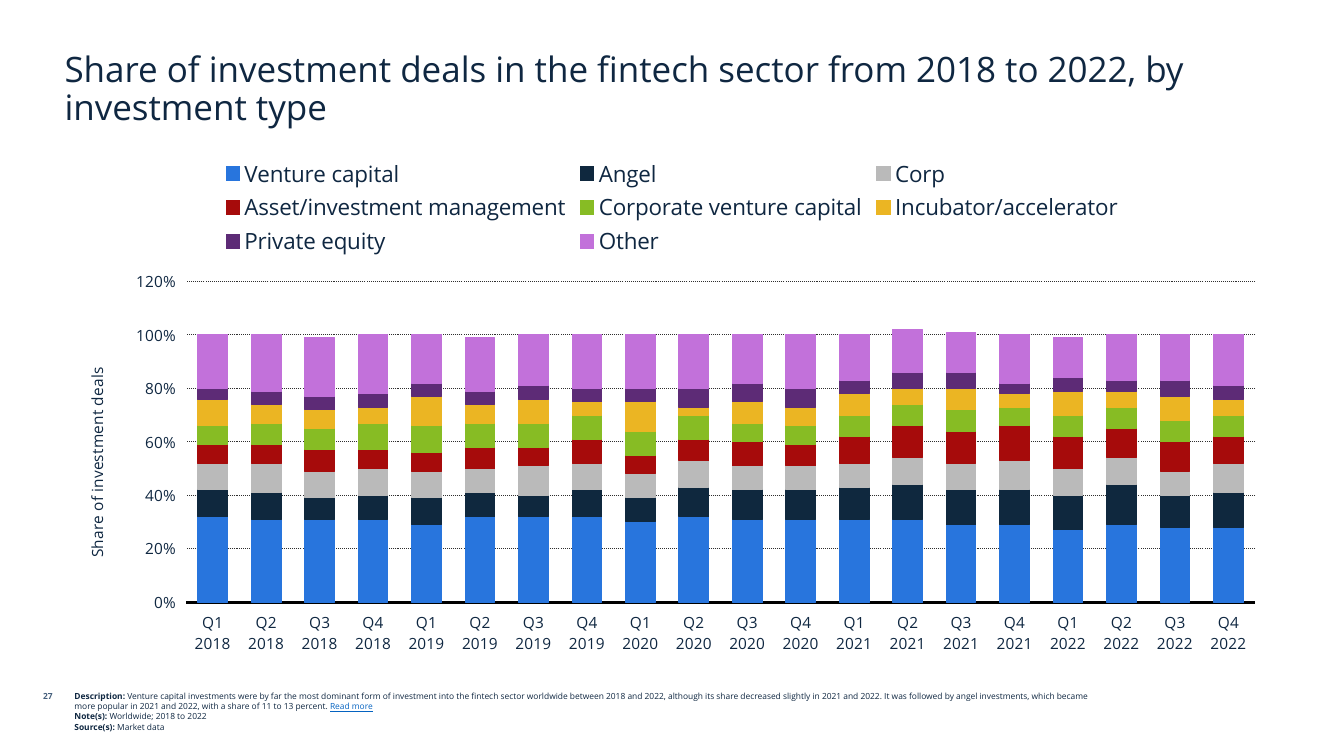
from dataclasses import dataclass

from lxml import etree
from pptx import Presentation
from pptx.chart.chart import Chart
from pptx.chart.data import CategoryChartData
from pptx.dml.color import RGBColor
from pptx.enum.chart import XL_CHART_TYPE, XL_LEGEND_POSITION, XL_TICK_LABEL_POSITION, XL_TICK_MARK
from pptx.enum.dml import MSO_LINE
from pptx.enum.text import MSO_ANCHOR, MSO_AUTO_SIZE, PP_ALIGN
from pptx.oxml.ns import qn
from pptx.util import Emu, Pt

STACKED = XL_CHART_TYPE.COLUMN_STACKED
LEGEND_TOP = XL_LEGEND_POSITION.TOP
LABELS_LOW = XL_TICK_LABEL_POSITION.LOW
NO_TICK = XL_TICK_MARK.NONE
DOTTED = MSO_LINE.ROUND_DOT
LEFT, RIGHT = PP_ALIGN.LEFT, PP_ALIGN.RIGHT
BOTTOM = MSO_ANCHOR.BOTTOM
NO_FIT = MSO_AUTO_SIZE.NONE
EMU_PER_PX = 9144


@dataclass(frozen=True)
class Theme:
    font: str = "Open Sans"
    ink: str = "0F2741"
    link: str = "0563C1"
    page_number: str = "455F7C"
    axis: str = "000000"
    grid: str = "2F2F2F"
    title_size: int = 25
    legend_size: int = 16
    axis_size: int = 11
    note_size: int = 6


@dataclass(frozen=True)
class Area:
    left: int
    top: int
    width: int
    height: int

    def emu(self) -> tuple:
        return tuple(Emu(side * EMU_PER_PX) for side in (self.left, self.top, self.width, self.height))


@dataclass(frozen=True)
class Span:
    text: str
    color: str
    bold: bool = False
    underline: bool = False


@dataclass(frozen=True)
class DealType:
    name: str
    color: str
    percents: tuple


THEME = Theme()
TITLE_AREA = Area(54, 46, 1224, 86)
CHART_AREA = Area(64, 146, 1205, 513)
NOTES_AREA = Area(64, 681, 1047, 58)
NUMBER_AREA = Area(0, 681, 62, 30)
PLOT_LAYOUT = {"x": 0.1, "y": 0.26, "w": 0.88, "h": 0.62}

TITLE = "Share of investment deals in the fintech sector from 2018 to 2022, by investment type"
DESCRIPTION = (
    "Venture capital investments were by far the most dominant form of investment into the fintech "
    "sector worldwide between 2018 and 2022, although its share decreased slightly in 2021 and 2022. "
    "It was followed by angel investments, which became more popular in 2021 and 2022, with a share "
    "of 11 to 13 percent. "
)
NOTES = (
    (
        Span("Description: ", THEME.ink, bold=True),
        Span(DESCRIPTION, THEME.ink),
        Span("Read more", THEME.link, underline=True),
    ),
    (Span("Note(s): ", THEME.ink, bold=True), Span("Worldwide; 2018 to 2022", THEME.ink)),
    (Span("Source(s): ", THEME.ink, bold=True), Span("Market data", THEME.ink)),
)
QUARTERS = [f"Q{quarter} {year}" for year in range(2018, 2023) for quarter in range(1, 5)]
DEAL_TYPES = (
    DealType("Venture capital", "2875DD",
             (32, 31, 31, 31, 29, 32, 32, 32, 30, 32, 31, 31, 31, 31, 29, 29, 27, 29, 28, 28)),
    DealType("Angel", "0F283E",
             (10, 10, 8, 9, 10, 9, 8, 10, 9, 11, 11, 11, 12, 13, 13, 13, 13, 15, 12, 13)),
    DealType("Corp", "BABABA",
             (10, 11, 10, 10, 10, 9, 11, 10, 9, 10, 9, 9, 9, 10, 10, 11, 10, 10, 9, 11)),
    DealType("Asset/investment management", "A60B0B",
             (7, 7, 8, 7, 7, 8, 7, 9, 7, 8, 9, 8, 10, 12, 12, 13, 12, 11, 11, 10)),
    DealType("Corporate venture capital", "87BC24",
             (7, 8, 8, 10, 10, 9, 9, 9, 9, 9, 7, 7, 8, 8, 8, 7, 8, 8, 8, 8)),
    DealType("Incubator/accelerator", "EBB523",
             (10, 7, 7, 6, 11, 7, 9, 5, 11, 3, 8, 7, 8, 6, 8, 5, 9, 6, 9, 6)),
    DealType("Private equity", "5D2B76",
             (4, 5, 5, 5, 5, 5, 5, 5, 5, 7, 7, 7, 5, 6, 6, 4, 5, 4, 6, 5)),
    DealType("Other", "C271DA",
             (20, 21, 22, 22, 18, 20, 19, 20, 20, 20, 18, 20, 17, 16, 15, 18, 15, 17, 17, 19)),
)


def style_font(font, size: int, color: str, bold: bool = False) -> None:
    font.name = THEME.font
    font.size = Pt(size)
    font.bold = bold
    font.color.rgb = RGBColor.from_string(color)


def add_span(para, span: Span, size: int) -> None:
    run = para.add_run()
    run.text = span.text
    style_font(run.font, size, span.color, span.bold)
    if span.underline:
        run.font.underline = True


def add_title(page) -> None:
    title = page.shapes.title
    title.left, title.top, title.width, title.height = TITLE_AREA.emu()
    frame = title.text_frame
    frame.auto_size = NO_FIT
    frame.word_wrap = True
    frame.vertical_anchor = BOTTOM
    para = frame.paragraphs[0]
    para.alignment = LEFT
    para.line_spacing = 0.9
    add_span(para, Span(TITLE, THEME.ink), THEME.title_size)


def add_text(page, area: Area, lines: tuple, alignment) -> None:
    frame = page.shapes.add_textbox(*area.emu()).text_frame
    frame.word_wrap = True
    for index, spans in enumerate(lines):
        para = frame.add_paragraph() if index else frame.paragraphs[0]
        para.alignment = alignment
        for span in spans:
            add_span(para, span, THEME.note_size)


def place_plot(chart: Chart) -> None:
    plot_area = chart.element.find(".//" + qn("c:plotArea"))
    layout = plot_area.find(qn("c:layout"))
    if layout is None:
        layout = etree.Element(qn("c:layout"))
        plot_area.insert(0, layout)
    manual = etree.SubElement(layout, qn("c:manualLayout"))
    settings = {"layoutTarget": "inner", "xMode": "edge", "yMode": "edge", **PLOT_LAYOUT}
    for name, value in settings.items():
        etree.SubElement(manual, qn(f"c:{name}")).set("val", str(value))


def style_axes(chart: Chart) -> None:
    for axis in (chart.category_axis, chart.value_axis):
        axis.major_tick_mark = NO_TICK
        axis.minor_tick_mark = NO_TICK
        axis.tick_label_position = LABELS_LOW
        style_font(axis.tick_labels.font, THEME.axis_size, THEME.ink)
    quarter_line = chart.category_axis.format.line
    quarter_line.color.rgb = RGBColor.from_string(THEME.axis)
    quarter_line.width = Pt(2)

    share = chart.value_axis
    share.minimum_scale, share.maximum_scale, share.major_unit = 0, 1.2, 0.2
    share.tick_labels.number_format = "#,##0%"
    share.tick_labels.number_format_is_linked = False
    share.format.line.fill.background()
    grid_line = share.major_gridlines.format.line
    grid_line.color.rgb = RGBColor.from_string(THEME.grid)
    grid_line.width = Pt(0.75)
    grid_line.dash_style = DOTTED
    frame = share.axis_title.text_frame
    add_span(frame.paragraphs[0], Span("Share of investment deals", THEME.ink), THEME.axis_size)
    share.axis_title.element.find(".//" + qn("a:bodyPr")).set("rot", "-5400000")


def add_deal_chart(page) -> None:
    data = CategoryChartData(number_format="0%")
    data.categories = QUARTERS
    for deal_type in DEAL_TYPES:
        data.add_series(deal_type.name, [percent / 100 for percent in deal_type.percents])
    chart = page.shapes.add_chart(STACKED, *CHART_AREA.emu(), data).chart
    chart.has_title = False
    style_font(chart.font, THEME.axis_size, THEME.ink)
    chart.has_legend = True
    chart.legend.position = LEGEND_TOP
    chart.legend.include_in_layout = False
    style_font(chart.legend.font, THEME.legend_size, THEME.ink)
    plot = chart.plots[0]
    plot.vary_by_categories = False
    plot.gap_width, plot.overlap = 80, 100
    for series, deal_type in zip(plot.series, DEAL_TYPES):
        color = RGBColor.from_string(deal_type.color)
        series.format.fill.solid()
        series.format.fill.fore_color.rgb = color
        series.format.line.color.rgb = color
        series.format.line.width = Pt(0.75)
    style_axes(chart)
    place_plot(chart)


def main() -> None:
    deck = Presentation()
    deck.slide_width, deck.slide_height = Emu(1333 * EMU_PER_PX), Emu(750 * EMU_PER_PX)
    page = deck.slides.add_slide(deck.slide_layouts[5])
    add_text(page, NOTES_AREA, NOTES, LEFT)
    add_deal_chart(page)
    add_text(page, NUMBER_AREA, ((Span("27", THEME.page_number, bold=True),),), RIGHT)
    add_title(page)
    deck.save("out.pptx")


if __name__ == "__main__":
    main()
